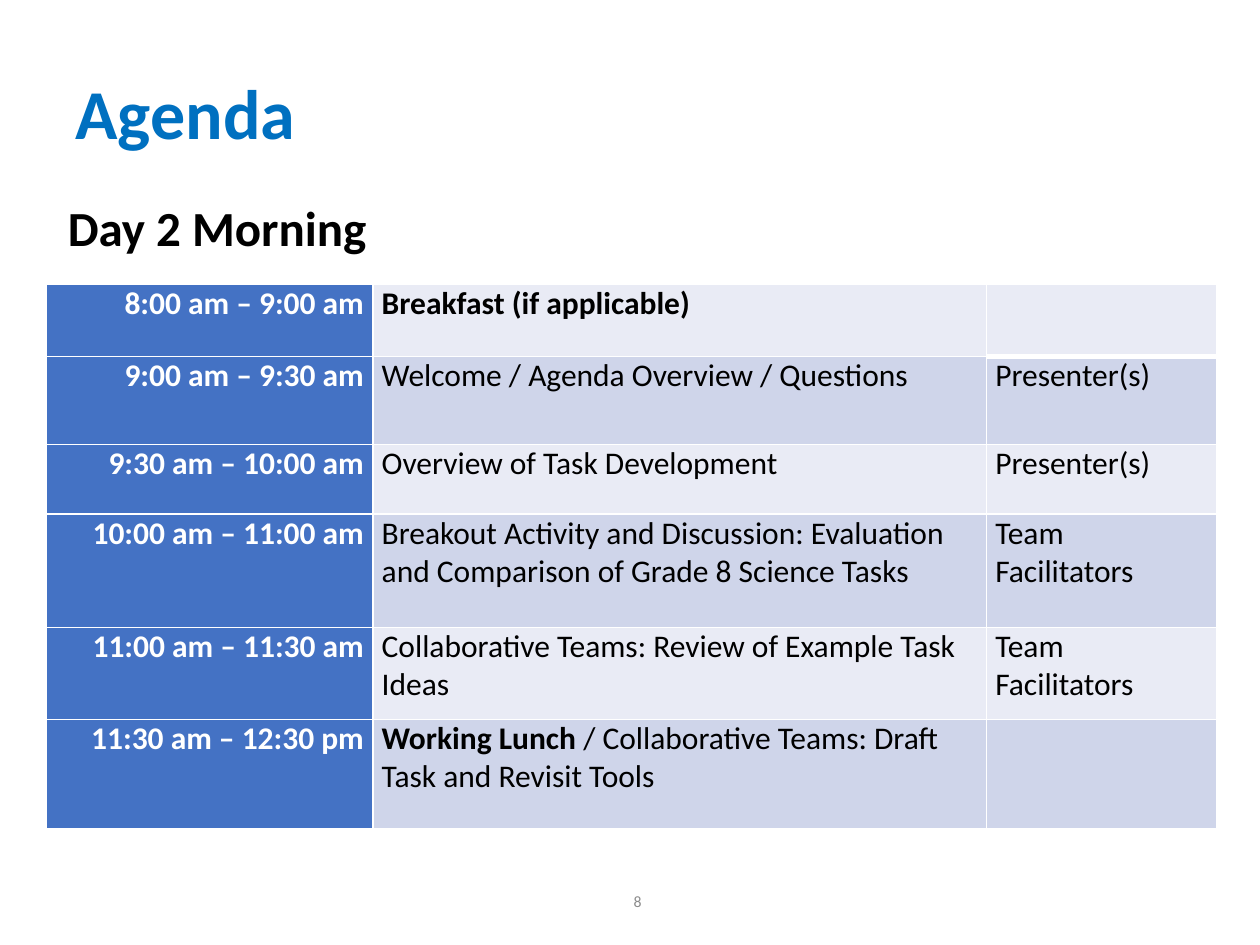
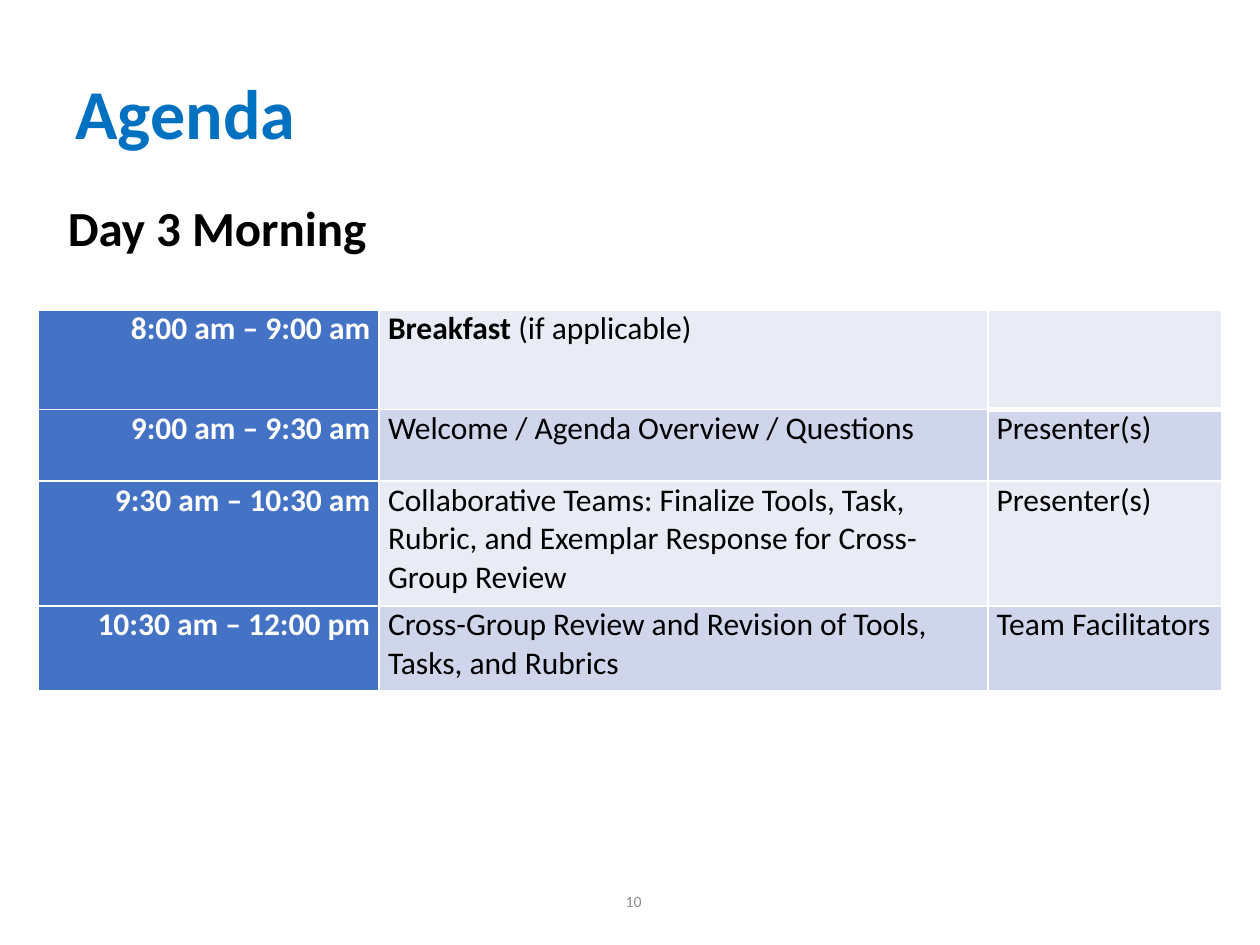
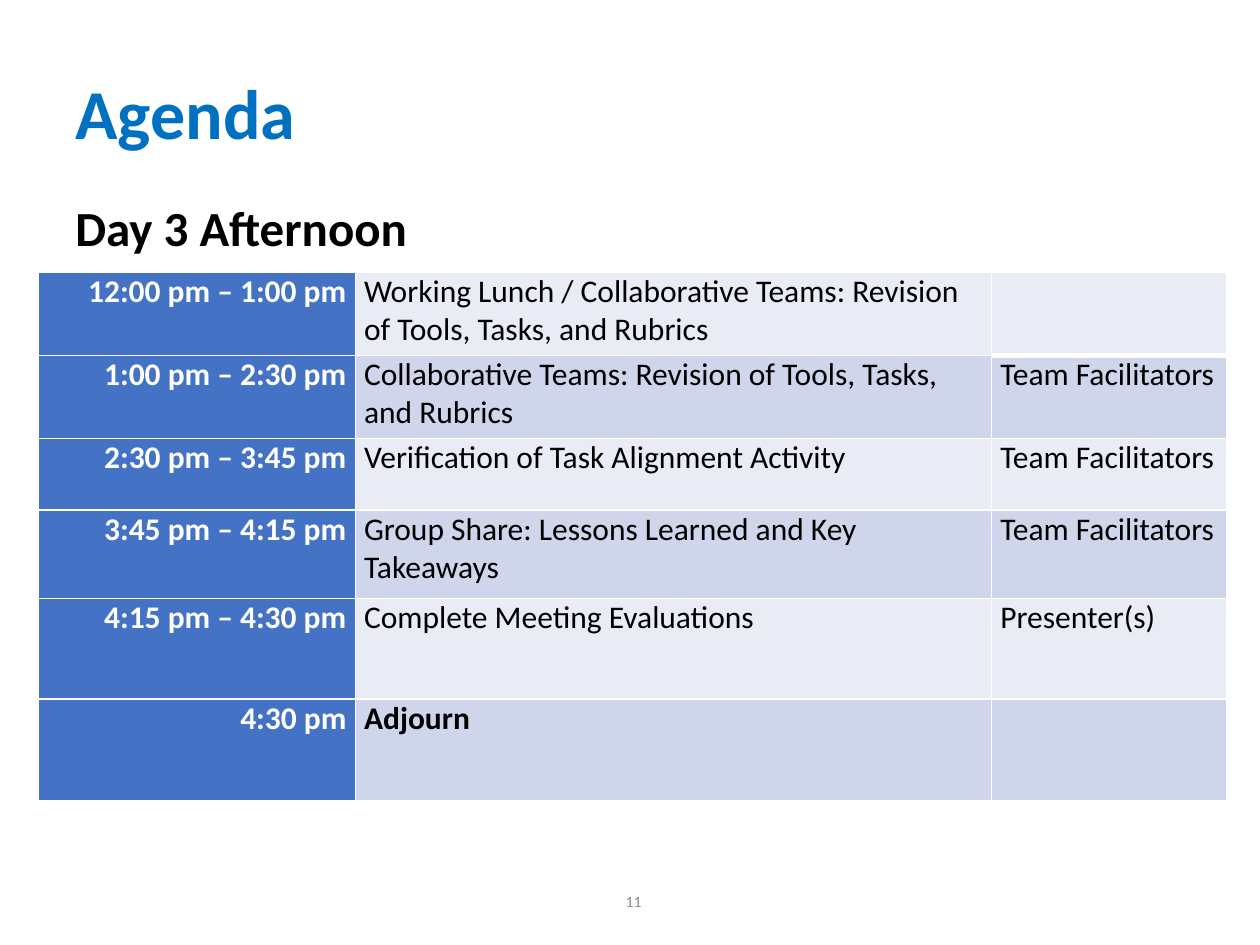
from dataclasses import dataclass

from lxml import etree
from pptx import Presentation
from pptx.dml.color import RGBColor
from pptx.enum.text import MSO_ANCHOR, PP_ALIGN
from pptx.oxml.ns import qn
from pptx.slide import Slide
from pptx.table import _Cell
from pptx.text.text import _Paragraph
from pptx.util import Inches, Pt

LEFT, RIGHT = PP_ALIGN.LEFT, PP_ALIGN.RIGHT
TOP, MIDDLE = MSO_ANCHOR.TOP, MSO_ANCHOR.MIDDLE

FONT = "Calibri"
BLACK, WHITE, GREY = "000000", "FFFFFF", "8C8C8C"
TITLE_BLUE, TIME_BLUE = "0070C0", "4472C4"
BANDS = ("E9EBF5", "CFD5EA")

TITLE_BOX = (0.5, 0.3, 9, 1.25)
NUMBER_BOX = (2.94, 6.95, 2.25, 0.4)
CELL_FORMAT = {
    "margin_left": Inches(0.07),
    "margin_right": Inches(0.07),
    "margin_top": 0,
    "margin_bottom": 0,
    "vertical_anchor": TOP,
}


@dataclass(frozen=True)
class Session:
    height: float
    time: str
    activity: str = ""
    lead: str = ""
    highlight: str = ""  # bold words that open the activity


@dataclass(frozen=True)
class Agenda:
    number: int
    heading: str
    heading_left: float
    table_left: float
    table_top: float
    columns: tuple[float, float, float]
    sessions: tuple[Session, ...]


AGENDAS = (
    Agenda(8, "Day 2 Morning", 0.44, 0.37, 2.26, (2.59, 4.87, 1.83), (
        Session(0.57, "8:00 am – 9:00 am", highlight="Breakfast (if applicable)"),
        Session(0.7, "9:00 am – 9:30 am", "Welcome / Agenda Overview / Questions",
                "Presenter(s)"),
        Session(0.55, "9:30 am – 10:00 am", "Overview of Task Development",
                "Presenter(s)"),
        Session(0.9, "10:00 am – 11:00 am",
                "Breakout Activity and Discussion: Evaluation and Comparison "
                "of Grade 8 Science Tasks", "Team Facilitators"),
        Session(0.73, "11:00 am – 11:30 am",
                "Collaborative Teams: Review of Example Task Ideas",
                "Team Facilitators"),
        Session(0.87, "11:30 am – 12:30 pm",
                " / Collaborative Teams: Draft Task and Revisit Tools",
                highlight="Working Lunch"),
    )),
    Agenda(10, "Day 3 Morning", 0.44, 0.3, 2.46, (2.71, 4.83, 1.86), (
        Session(0.79, "8:00 am – 9:00 am", "(if applicable)", highlight="Breakfast "),
        Session(0.57, "9:00 am – 9:30 am", "Welcome / Agenda Overview / Questions",
                "Presenter(s)"),
        Session(0.99, "9:30 am – 10:30 am",
                "Collaborative Teams: Finalize Tools, Task, Rubric, and Exemplar "
                "Response for Cross-Group Review", "Presenter(s)"),
        Session(0.67, "10:30 am – 12:00 pm",
                "Cross-Group Review and Revision of Tools, Tasks, and Rubrics",
                "Team Facilitators"),
    )),
    Agenda(11, "Day 3 Afternoon", 0.5, 0.3, 2.16, (2.52, 5.05, 1.87), (
        Session(0.66, "12:00 pm – 1:00 pm",
                "Working Lunch / Collaborative Teams: Revision of Tools, Tasks, "
                "and Rubrics"),
        Session(0.66, "1:00 pm – 2:30 pm",
                "Collaborative Teams: Revision of Tools, Tasks, and Rubrics",
                "Team Facilitators"),
        Session(0.57, "2:30 pm – 3:45 pm", "Verification of Task Alignment Activity",
                "Team Facilitators"),
        Session(0.7, "3:45 pm – 4:15 pm",
                "Group Share: Lessons Learned and Key Takeaways",
                "Team Facilitators"),
        Session(0.8, "4:15 pm – 4:30 pm", "Complete Meeting Evaluations",
                "Presenter(s)"),
        Session(0.81, "4:30 pm", highlight="Adjourn"),
    )),
)


def rgb(color: str) -> RGBColor:
    return RGBColor.from_string(color)


def add_words(paragraph: _Paragraph, words: str, size: float, color: str,
              bold: bool = False) -> None:
    run = paragraph.add_run()
    run.text = words
    for name, value in {"name": FONT, "size": Pt(size), "bold": bold}.items():
        setattr(run.font, name, value)
    run.font.color.rgb = rgb(color)


def add_title(slide: Slide) -> None:
    title = slide.shapes.title
    title.left, title.top, title.width, title.height = map(Inches, TITLE_BOX)
    title.text_frame.vertical_anchor = MIDDLE
    paragraph = title.text_frame.paragraphs[0]
    paragraph.alignment = LEFT
    paragraph.line_spacing = 0.9
    add_words(paragraph, "Agenda", 40, TITLE_BLUE, True)


def add_label(slide: Slide, box: tuple[float, float, float, float], words: str,
              size: float, color: str, bold: bool = False,
              alignment: PP_ALIGN = LEFT, anchor: MSO_ANCHOR = TOP) -> None:
    frame = slide.shapes.add_textbox(*map(Inches, box)).text_frame
    frame.word_wrap = True
    frame.vertical_anchor = anchor
    frame.paragraphs[0].alignment = alignment
    add_words(frame.paragraphs[0], words, size, color, bold)


def add_borders(cell: _Cell, widths: dict[str, float]) -> None:
    """Draw white cell borders; widths go from side (L, R, T, B) to points."""
    properties = cell._tc.get_or_add_tcPr()
    for side, width in widths.items():
        line = etree.SubElement(properties, qn(f"a:ln{side}"), w=str(Pt(width)))
        fill = etree.SubElement(line, qn("a:solidFill"))
        etree.SubElement(fill, qn("a:srgbClr"), val=WHITE)


def fill_cell(cell: _Cell, fill: str, parts: list[tuple[str, bool]],
              color: str = BLACK, alignment: PP_ALIGN = LEFT) -> None:
    for name, value in CELL_FORMAT.items():
        setattr(cell, name, value)
    cell.fill.solid()
    cell.fill.fore_color.rgb = rgb(fill)
    paragraph = cell.text_frame.paragraphs[0]
    paragraph.alignment = alignment
    for words, bold in parts:
        if words:
            add_words(paragraph, words, 18, color, bold)


def add_schedule(slide: Slide, agenda: Agenda) -> None:
    heights = [session.height for session in agenda.sessions]
    schedule = slide.shapes.add_table(
        len(heights), len(agenda.columns),
        Inches(agenda.table_left), Inches(agenda.table_top),
        Inches(sum(agenda.columns)), Inches(sum(heights))).table
    schedule.first_row = schedule.horz_banding = False
    for column, width in zip(schedule.columns, agenda.columns):
        column.width = Inches(width)
    add_borders(schedule.cell(0, 2), {"L": 1, "R": 1, "T": 1, "B": 3})
    for index, session in enumerate(agenda.sessions):
        row = schedule.rows[index]
        row.height = Inches(session.height)
        time, activity, lead = row.cells
        band = BANDS[index % 2]
        fill_cell(time, TIME_BLUE, [(session.time, True)], WHITE, RIGHT)
        fill_cell(activity, band, [(session.highlight, True), (session.activity, False)])
        fill_cell(lead, band, [(session.lead, False)])


def main() -> None:
    deck = Presentation()
    deck.slide_width, deck.slide_height = Inches(10), Inches(7.5)
    title_only = deck.slide_layouts[5]
    for agenda in AGENDAS:
        slide = deck.slides.add_slide(title_only)
        add_label(slide, NUMBER_BOX, str(agenda.number), 9, GREY,
                  alignment=RIGHT, anchor=MIDDLE)
        add_label(slide, (agenda.heading_left, 1.52, 9, 0.64), agenda.heading,
                  28, BLACK, True)
        add_title(slide)
        add_schedule(slide, agenda)
    deck.save("out.pptx")


if __name__ == "__main__":
    main()
